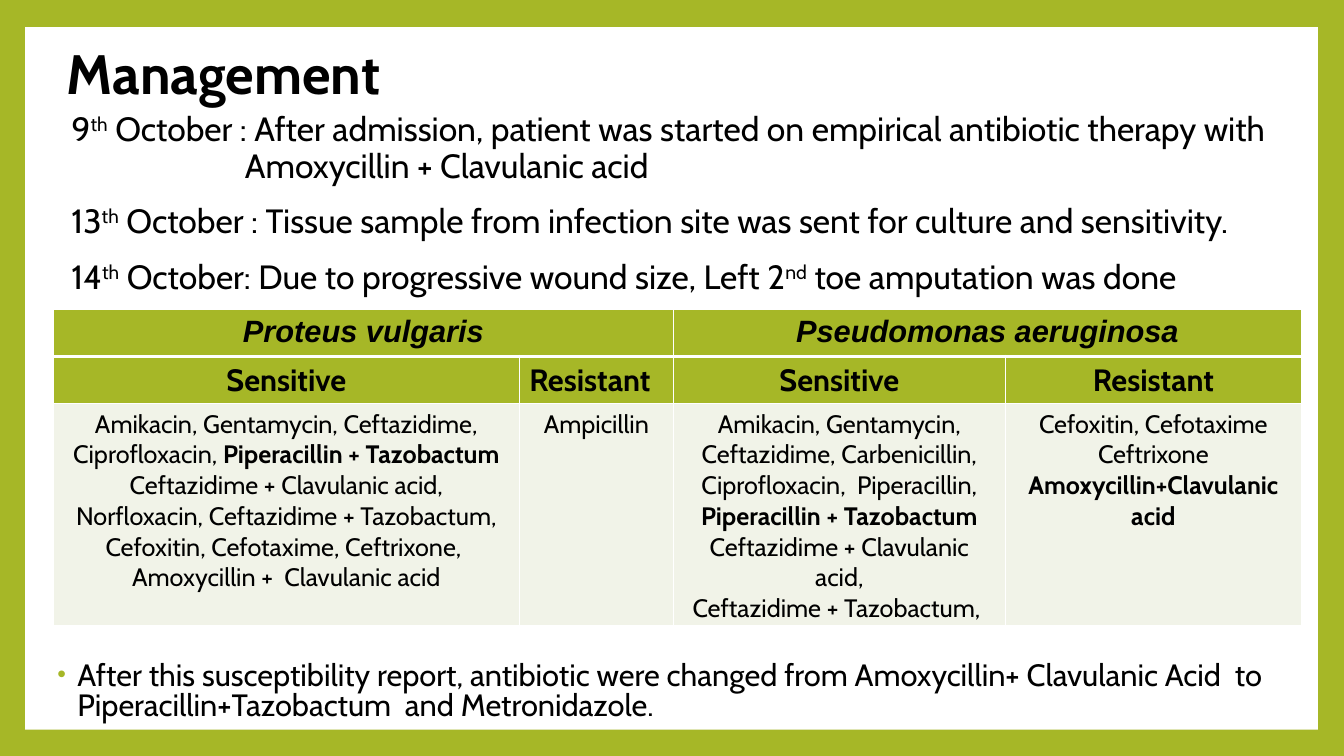
from lxml import etree
from pptx import Presentation
from pptx.dml.color import RGBColor
from pptx.enum.shapes import MSO_SHAPE
from pptx.enum.text import MSO_ANCHOR, MSO_AUTO_SIZE, PP_ALIGN
from pptx.oxml.ns import qn
from pptx.util import Inches, Pt

RECTANGLE = MSO_SHAPE.RECTANGLE
MIDDLE, TOP = MSO_ANCHOR.MIDDLE, MSO_ANCHOR.TOP
NO_AUTOFIT = MSO_AUTO_SIZE.NONE
LEFT, CENTER = PP_ALIGN.LEFT, PP_ALIGN.CENTER
GREEN, PALE, WHITE, BLACK = "A6B727", "F1F3E8", "FFFFFF", "000000"


def color(hex_string):
    return RGBColor.from_string(hex_string)


def write(frame, paragraphs, size=18, font="Cabin", bold=False, italic=False,
          align=LEFT, spacing=1.0, before=0, indents=None, accent="bold"):
    """Fill a text frame; pieces between | marks are bold or superscript."""
    for number, text in enumerate(paragraphs):
        paragraph = frame.paragraphs[0] if number == 0 else frame.add_paragraph()
        paragraph.alignment = align
        paragraph.line_spacing = spacing
        paragraph.space_before = Pt(before)
        if indents:
            margin, first_line = indents[number]
            properties = paragraph._p.get_or_add_pPr()
            properties.set("marL", str(Inches(margin)))
            properties.set("indent", str(Inches(first_line)))
        for position, piece in enumerate(text.split("|")):
            if not piece:
                continue
            accented = position % 2 == 1
            run = paragraph.add_run()
            run.text = piece
            run.font.name = font
            run.font.size = Pt(size)
            run.font.bold = bold or (accented and accent == "bold")
            run.font.italic = italic
            run.font.color.rgb = color(BLACK)
            if accented and accent == "superscript":
                run._r.get_or_add_rPr().set("baseline", "30000")


presentation = Presentation()
presentation.slide_width = Inches(13.33)
presentation.slide_height = Inches(7.5)
slide = presentation.slides.add_slide(presentation.slide_layouts[5])

# Green frame around a white panel
slide.background.fill.solid()
slide.background.fill.fore_color.rgb = color(GREEN)
panel = slide.shapes.add_shape(RECTANGLE, Inches(0.25), Inches(0.27),
                               Inches(12.82), Inches(6.97))
panel.shadow.inherit = False
panel.fill.solid()
panel.fill.fore_color.rgb = color(WHITE)
panel.line.fill.background()
slide.shapes._spTree.insert(2, panel._element)

# Title
title = slide.shapes.title
title.left, title.top = Inches(0.56), Inches(0.46)
title.width, title.height = Inches(10.8), Inches(0.6)
title.text_frame.auto_size = NO_AUTOFIT
title.text_frame.vertical_anchor = MIDDLE
write(title.text_frame, ["Management"], size=39.6, bold=True, spacing=0.9)

# Treatment timeline
timeline = slide.shapes.add_textbox(Inches(0.56), Inches(1.07),
                                    Inches(12.38), Inches(2.07)).text_frame
timeline.word_wrap = True
write(timeline, [
    "9|th| October : After admission, patient was started on empirical "
    "antibiotic therapy with   Amoxycillin + Clavulanic acid",
    "13|th| October : Tissue sample from infection site was sent for culture "
    "and sensitivity.",
    "14|th| October: Due to progressive wound size, Left 2|nd| toe amputation "
    "was done",
], size=24, spacing=0.9, before=14, accent="superscript",
    indents=[(1.77, -1.72), (1.88, -1.83), (0.05, 0)])

# Susceptibility table
organisms = ["Proteus vulgaris", "", "Pseudomonas aeruginosa", ""]
responses = ["Sensitive", "Resistant"] * 2
antibiotics = [
    ["Amikacin, Gentamycin, Ceftazidime, Ciprofloxacin, "
     "|Piperacillin + Tazobactum|",
     "Ceftazidime + Clavulanic acid, Norfloxacin, Ceftazidime + Tazobactum, "
     "Cefoxitin, Cefotaxime, Ceftrixone, ",
     "Amoxycillin +  Clavulanic acid"],
    ["Ampicillin"],
    ["Amikacin, Gentamycin, Ceftazidime, Carbenicillin, Ciprofloxacin,  "
     "Piperacillin, |Piperacillin + Tazobactum|",
     "Ceftazidime + Clavulanic acid,",
     "Ceftazidime + Tazobactum, "],
    ["Cefoxitin, Cefotaxime", "Ceftrixone", "|Amoxycillin+Clavulanic acid|"],
]
rows = [[[name] for name in organisms], [[name] for name in responses], antibiotics]
row_formats = [
    dict(size=22, font="Arial", bold=True, italic=True),
    dict(size=22, bold=True),
    dict(size=18),
]
susceptibility = slide.shapes.add_table(3, 4, Inches(0.53), Inches(3.07),
                                        Inches(12.38), Inches(2.84)).table
for column, width in zip(susceptibility.columns, [4.62, 1.53, 3.29, 2.94]):
    column.width = Inches(width)
for row, height in zip(susceptibility.rows, [0.43, 0.43, 1.98]):
    row.height = Inches(height)
for first in (0, 2):
    susceptibility.cell(0, first).merge(susceptibility.cell(0, first + 1))

for r, contents in enumerate(rows):
    for c, paragraphs in enumerate(contents):
        cell = susceptibility.cell(r, c)
        cell.vertical_anchor = TOP
        borders = cell._tc.get_or_add_tcPr()
        for side in ("lnL", "lnR", "lnT", "lnB"):
            thick = (r, side) in ((0, "lnB"), (1, "lnT"))
            border = etree.SubElement(borders, qn("a:" + side),
                                      w=str(Pt(3 if thick else 1)))
            paint = etree.SubElement(border, qn("a:solidFill"))
            etree.SubElement(paint, qn("a:srgbClr"), val=WHITE)
        cell.fill.solid()
        cell.fill.fore_color.rgb = color(PALE if r == 2 else GREEN)
        if not cell.is_spanned:
            align = LEFT if (r, c) == (1, 1) else CENTER
            write(cell.text_frame, paragraphs, align=align, **row_formats[r])

# Change of therapy
outcome = slide.shapes.add_textbox(Inches(0.42), Inches(6.53),
                                   Inches(12.49), Inches(0.7)).text_frame
outcome.word_wrap = True
write(outcome, [
    "After this susceptibility report, antibiotic were changed from "
    "Amoxycillin+ Clavulanic Acid  to Piperacillin+Tazobactum  and Metronidazole.",
], size=22, spacing=0.8, before=14, indents=[(0.25, -0.2)])
bullet = outcome.paragraphs[0]._p.get_or_add_pPr()
bullet_color = etree.SubElement(bullet, qn("a:buClr"))
etree.SubElement(bullet_color, qn("a:srgbClr"), val=GREEN)
etree.SubElement(bullet, qn("a:buSzPct"), val="80000")
etree.SubElement(bullet, qn("a:buFont"), typeface="Arial")
etree.SubElement(bullet, qn("a:buChar"), char="•")

presentation.save("out.pptx")
